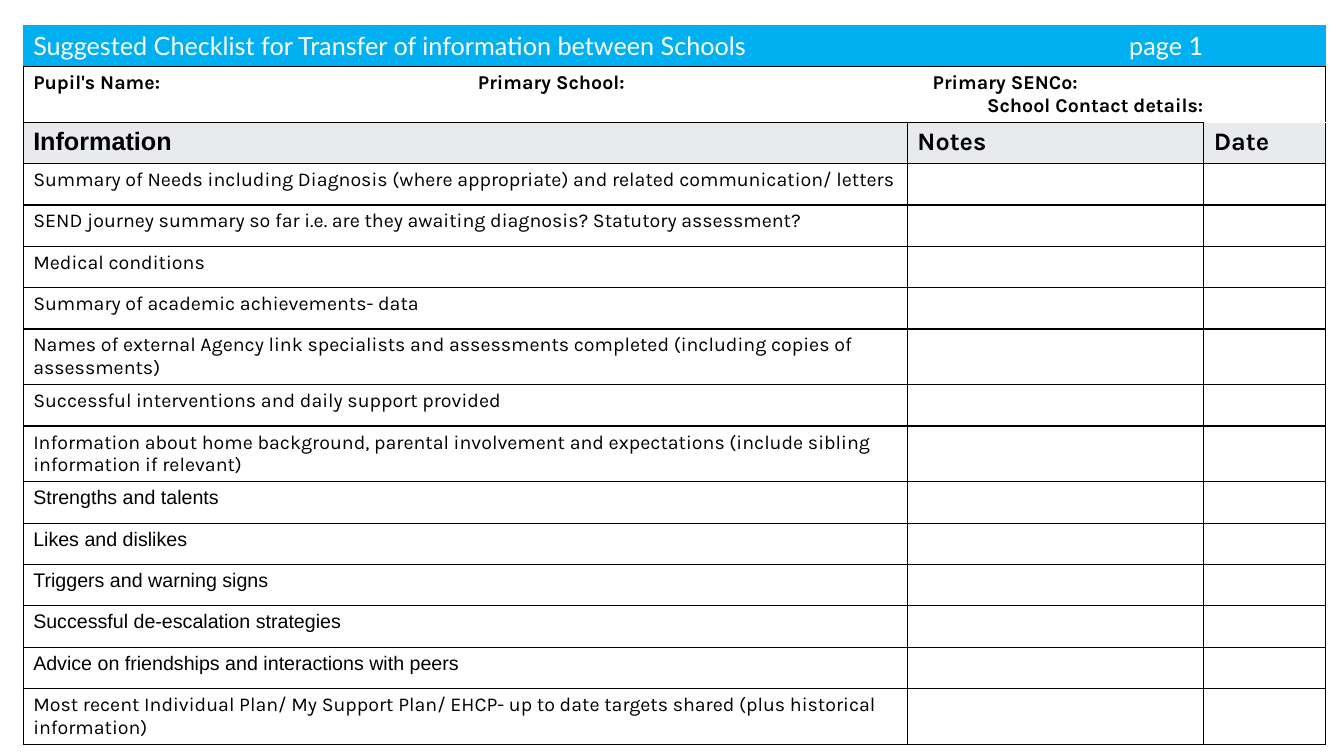
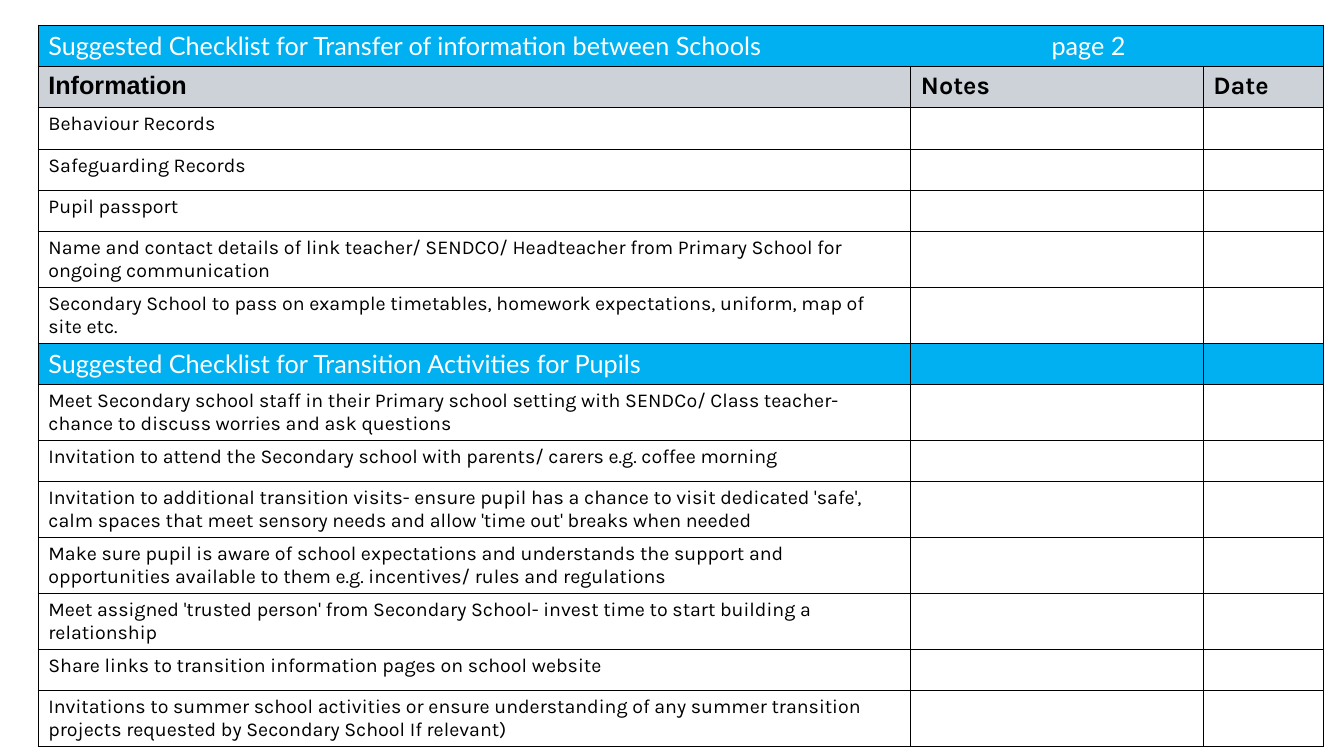
from dataclasses import dataclass

from lxml.etree import SubElement
from pptx import Presentation
from pptx.dml.color import RGBColor
from pptx.oxml.ns import qn
from pptx.util import Inches, Pt

WIDTH, HEIGHT = 13.33, 7.5
BLACK, WHITE, BLUE = "000000", "FFFFFF", "00B0F0"
COLUMNS = (8.77, 2.94, 1.21)
ROW, TALL_ROW = 0.41, 0.55
LINE_CHARS = 92
SIDES = ("L", "R", "T", "B")


@dataclass
class Style:
    font: str = "Karla"
    size: int = 14
    color: str = BLACK
    bold: bool = False
    fill: str = WHITE


BAND = Style("Lato", 18, WHITE, fill=BLUE)
CONTACT = Style(bold=True)
ITEM = Style()
PLAIN_ITEM = Style("Arial")

TITLE = "Suggested Checklist for Transfer of information between Schools"
CONTACT_LINES = (
    "Pupil's Name:\tPrimary School:\tPrimary SENCo:",
    "\tSchool Contact details:",
)
SCHOOL_ITEMS = (
    "Summary of Needs including Diagnosis (where appropriate) and related communication/ letters",
    "SEND journey summary so far i.e. are they awaiting diagnosis? Statutory assessment?",
    "Medical conditions",
    "Summary of academic achievements- data",
    "Names of external Agency link specialists and assessments completed (including copies of assessments)",
    "Successful interventions and daily support provided",
    "Information about home background, parental involvement and expectations "
    "(include sibling information if relevant)",
)
PUPIL_ITEMS = (
    "Strengths and talents",
    "Likes and dislikes",
    "Triggers and warning signs",
    "Successful de-escalation strategies",
    "Advice on friendships and interactions with peers",
)
PLAN_ITEM = (
    "Most recent Individual Plan/ My Support Plan/ EHCP- up to date targets shared "
    "(plus historical information)"
)
RECORD_ITEMS = (
    "Behaviour Records",
    "Safeguarding Records",
    "Pupil passport",
    "Name and contact details of link teacher/ SENDCO/ Headteacher from Primary School "
    "for ongoing communication",
    "Secondary School to pass on example timetables, homework expectations, uniform, map of site etc.",
)
ACTIVITIES_TITLE = "Suggested Checklist for Transition Activities for Pupils"
ACTIVITY_ITEMS = (
    "Meet Secondary school staff in their Primary school setting with SENDCo/ Class teacher- "
    "chance to discuss worries and ask questions",
    "Invitation to attend the Secondary school with parents/ carers e.g. coffee morning",
    "Invitation to additional transition visits- ensure pupil has a chance to visit dedicated 'safe', "
    "calm spaces that meet sensory needs and allow 'time out' breaks when needed",
    "Make sure pupil is aware of school expectations and understands the support and "
    "opportunities available to them e.g. incentives/ rules and regulations",
    "Meet assigned 'trusted person' from Secondary School- invest time to start building a relationship",
    "Share links to transition information pages on school website",
    "Invitations to summer school activities or ensure understanding of any summer transition "
    "projects requested by Secondary School If relevant)",
)


def rgb(color):
    return RGBColor.from_string(color)


def set_border(cell, side, color):
    """Draw one side in a colour, or clear it when the colour is None."""
    tcPr = cell._tc.get_or_add_tcPr()
    ln = tcPr.find(qn(f"a:ln{side}"))
    if ln is None:
        ln = SubElement(tcPr, qn(f"a:ln{side}"), w=str(Pt(1)))
    for child in list(ln):
        ln.remove(child)
    if color is None:
        SubElement(ln, qn("a:noFill"))
    else:
        fill = SubElement(ln, qn("a:solidFill"))
        SubElement(fill, qn("a:srgbClr"), val=color)


def format_cell(cell, style):
    for side in SIDES:
        set_border(cell, side, BLACK)
    cell.fill.solid()
    cell.fill.fore_color.rgb = rgb(style.fill)


def add_text(p, text, style):
    r = p.add_run()
    r.text = text
    r.font.name, r.font.size = style.font, Pt(style.size)
    r.font.bold, r.font.color.rgb = style.bold, rgb(style.color)


def set_tabs(p, stops):
    tabs = SubElement(p._p.get_or_add_pPr(), qn("a:tabLst"))
    for stop in stops:
        SubElement(tabs, qn("a:tab"), pos=str(Inches(stop)), algn="l")


def merge_row(table, row):
    table.cell(row, 0).merge(table.cell(row, len(COLUMNS) - 1))


def write_band(table, row, page, stop):
    merge_row(table, row)
    p = table.cell(row, 0).text_frame.paragraphs[0]
    set_tabs(p, [stop])
    add_text(p, f"{TITLE}\t{page}", BAND)


def write_contacts(table, row):
    merge_row(table, row)
    tf = table.cell(row, 0).text_frame
    for i, (line, stops) in enumerate(zip(CONTACT_LINES, ((4.41, 8.92), (9.46,)))):
        p = tf.add_paragraph() if i else tf.paragraphs[0]
        set_tabs(p, stops)
        add_text(p, line, CONTACT)


def write_headings(table, row, fill):
    for col, (text, font) in enumerate((("Information", "Arial"), ("Notes", "Karla"), ("Date", "Karla"))):
        style = Style(font, 18, bold=True, fill=fill)
        add_text(table.cell(row, col).text_frame.paragraphs[0], text, style)


def add_checklist(s, left, top, width, rows):
    """Add a bordered table; rows holds (style, text), with no text where it is written later."""
    heights = [TALL_ROW if len(text) > LINE_CHARS or style is CONTACT else ROW for style, text in rows]
    table = s.shapes.add_table(len(rows), len(COLUMNS), Inches(left), Inches(top),
                               Inches(width), Inches(sum(heights))).table
    table.first_row = table.horz_banding = False
    for column, share in zip(table.columns, COLUMNS):
        column.width = Inches(width * share / sum(COLUMNS))
    for i, ((style, text), height) in enumerate(zip(rows, heights)):
        table.rows[i].height = Inches(height)
        for cell in table.rows[i].cells:
            format_cell(cell, style)
        if text:
            add_text(table.cell(i, 0).text_frame.paragraphs[0], text, style)
    return table


def items(texts, style=ITEM):
    return [(style, text) for text in texts]


def add_school_page(s):
    head_fill = "E8EAED"
    rows = [(BAND, ""), (CONTACT, ""), (Style(fill=head_fill), "")]
    rows += items(SCHOOL_ITEMS) + items(PUPIL_ITEMS, PLAIN_ITEM) + items([PLAN_ITEM])
    table = add_checklist(s, 0.23, 0.25, 12.92, rows)
    write_band(table, 0, "page 1", 10.87)
    write_contacts(table, 1)
    write_headings(table, 2, head_fill)
    for cell in table.rows[0].cells:
        for side in "LRT":
            set_border(cell, side, None)
    set_border(table.cell(1, 2), "B", WHITE)
    set_border(table.cell(2, 2), "T", WHITE)


def add_pupil_page(s):
    head_fill = "CCD2D8"
    rows = [(BAND, ""), (Style(fill=head_fill), "")]
    rows += items(RECORD_ITEMS) + [(BAND, ACTIVITIES_TITLE)] + items(ACTIVITY_ITEMS)
    table = add_checklist(s, 0.38, 0.25, 12.75, rows)
    write_band(table, 0, "page 2", 9.95)
    write_headings(table, 1, head_fill)


def main():
    prs = Presentation()
    prs.slide_width, prs.slide_height = Inches(WIDTH), Inches(HEIGHT)
    blank = prs.slide_layouts[6]
    for add_page in (add_school_page, add_pupil_page):
        add_page(prs.slides.add_slide(blank))
    prs.save("out.pptx")


if __name__ == "__main__":
    main()
